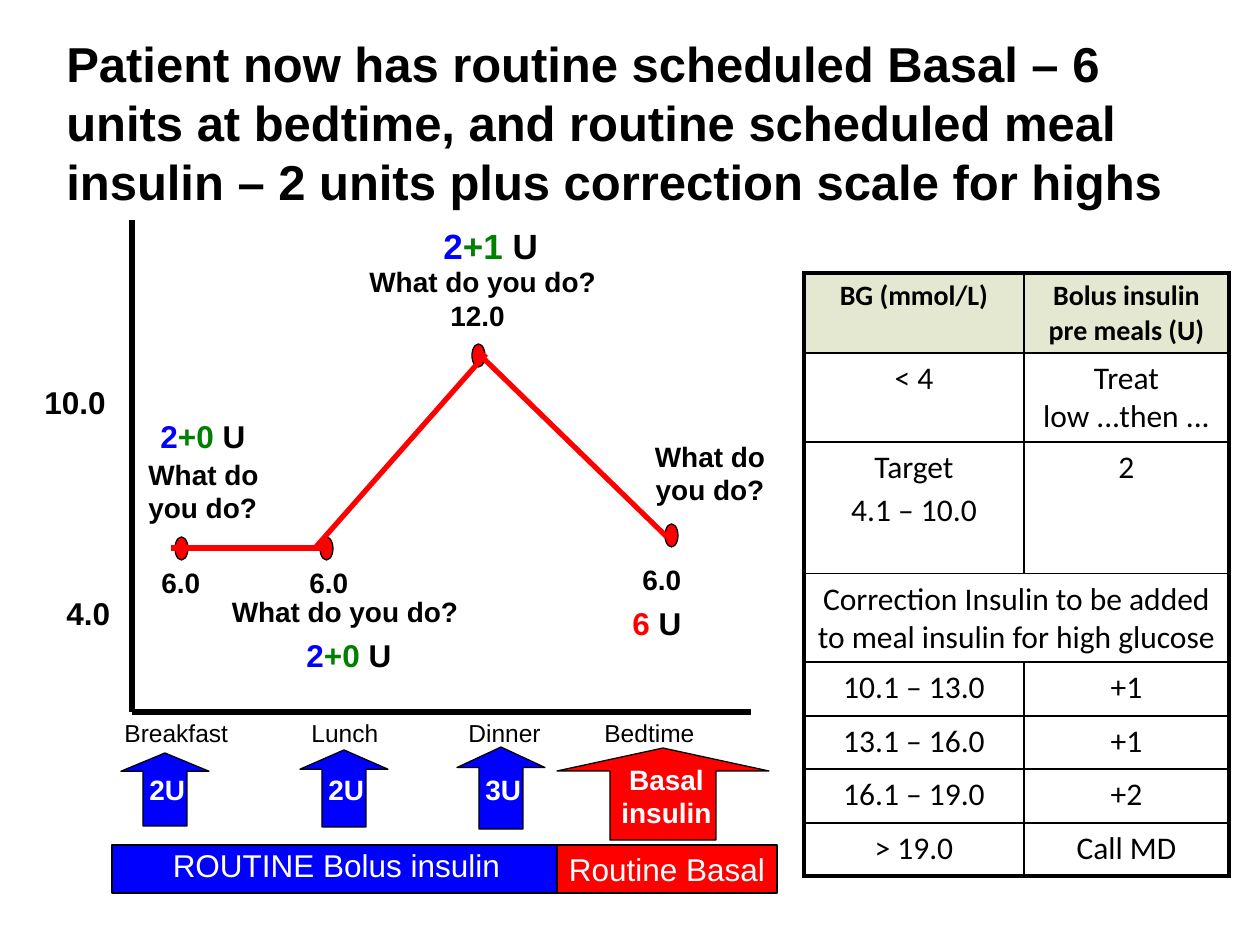
from dataclasses import dataclass

from lxml import etree
from pptx import Presentation
from pptx import util as u
from pptx.dml.color import RGBColor
from pptx.enum import shapes, text
from pptx.oxml import ns


@dataclass
class Theme:
    black: str = "000000"
    white: str = "FFFFFF"
    blue: str = "0000FF"
    green: str = "008000"
    red: str = "FF0000"
    head: str = "E5E8D0"
    sans: str = "Arial"
    grid: str = "Calibri"
    title: int = 28
    big: int = 20
    mid: int = 18
    small: int = 16
    tiny: int = 14
    thick: float = 3
    frame: float = 2.25
    rule: float = 1
    thin: float = 0.75


T = Theme()
MID = text.PP_ALIGN.CENTER
KIND = shapes.MSO_SHAPE


def px(n):
    return u.Emu(round(n * 914400 / 126))


def rgb(tone):
    return RGBColor.from_string(tone)


def style(para, size, tone=T.black, bold=True, face=T.sans, align=None):
    font = para.font
    font.name, font.size, font.bold = face, u.Pt(size), bold
    font.color.rgb = rgb(tone)
    para.alignment = align


def write(slide, box, words, size, **look):
    frame = slide.shapes.add_textbox(*map(px, box)).text_frame
    frame.word_wrap = True
    para = frame.paragraphs[0]
    style(para, size, **look)
    parts = [(words, None)] if isinstance(words, str) else words
    for part, tone in parts:
        run = para.add_run()
        run.text = part
        if tone:
            run.font.color.rgb = rgb(tone)
    return frame


def draw(slide, kind, box, tone):
    shape = slide.shapes.add_shape(kind, *map(px, box))
    shape.shadow.inherit = False
    shape.fill.solid()
    shape.fill.fore_color.rgb = rgb(tone)
    shape.line.color.rgb = rgb(T.black)
    shape.line.width = u.Pt(T.thin)
    return shape


def stroke(slide, ends, tone):
    line = slide.shapes.add_connector(shapes.MSO_CONNECTOR.STRAIGHT, *map(px, ends))
    line.line.color.rgb = rgb(tone)
    line.line.width = u.Pt(T.thick)
    etree.SubElement(line._element.spPr, ns.qn("a:effectLst"))


def title(slide, box):
    words = ("Patient now has routine scheduled Basal – 6 units at bedtime, and "
             "routine scheduled meal insulin – 2 units plus correction scale for highs")
    frame = write(slide, box, words, T.title)
    frame.vertical_anchor = text.MSO_ANCHOR.MIDDLE


def graph(slide, box):
    left, top, wide, high = box

    def put(x, y, w, h, words, size, **look):
        write(slide, (left + x, top + y, w, h), words, size, **look)

    def join(a, b, c, d, tone):
        stroke(slide, (left + a, top + b, left + c, top + d), tone)

    axis = 100
    join(axis, 2, axis, high, T.black)
    join(axis, high, wide, high, T.black)
    put(22, 370, 78, 50, "4.0", T.mid)
    put(0, 159, 101, 50, "10.0", T.mid)
    for x, meal in (80, "Breakfast"), (267, "Lunch"), (424, "Dinner"), (560, "Bedtime"):
        put(x, high, 158, 42, meal, T.tiny, bold=False)

    for x, y in (143, 319), (288, 319), (440, 126), (633, 306):
        draw(slide, KIND.OVAL, (left + x, top + y, 13, 23), T.red)
    for ends in (139, 330, 289, 330), (283, 330, 454, 136), (447, 136, 635, 319):
        join(*ends, T.red)
    for x, y, value in (117, 341, "6.0"), (265, 341, "6.0"), (406, 74, "12.0"), (598, 338, "6.0"):
        put(x, y, 87, 47, value, T.small)

    for x, y, w, h, align in ((104, 233, 147, 81, None), (185, 370, 256, 47, MID),
                              (325, 40, 273, 47, None), (608, 215, 140, 81, MID)):
        put(x, y, w, h, "What do you do?", T.small, align=align)
    for x, y, extra, size in ((116, 193, "+0 ", T.mid), (262, 412, "+0 ", T.mid),
                              (399, 0, "+1 ", T.big)):
        put(x, y, 147, 50, [("2", T.blue), (extra, T.green), ("U", T.black)], size)
    put(588, 380, 116, 50, [("6 ", T.red), ("U", T.black)], T.mid)


def doses(slide, box):
    left, top, wide, high = box
    split, bar = 445, 48
    base = top + high - bar
    for x, y, h, dose in (9, 6, 73, "2U"), (188, 3, 77, "2U"), (345, 0, 82, "3U"):
        draw(slide, KIND.UP_ARROW, (left + x, top + y, 88, h), T.blue).adjustments[1] = 0.25
        write(slide, (left + x + 16, top + 19, 83, 47), dose, T.small, tone=T.white)

    arrow = draw(slide, KIND.UP_ARROW, (left + split, top + 1, 212, 92), T.red)
    arrow.adjustments[1] = 0.25
    write(slide, (left + split + 45, top + 9, 129, 81), "Basal insulin", T.small,
          tone=T.white, align=MID)

    draw(slide, KIND.RECTANGLE, (left, base, split, bar), T.blue)
    write(slide, (left + 4, base - 5, split - 4, 50), "ROUTINE Bolus insulin", T.mid,
          tone=T.white, bold=False, align=MID)
    basal = draw(slide, KIND.RECTANGLE, (left + split, base, wide - split, bar), T.red)
    frame = basal.text_frame
    frame.word_wrap = False
    frame.text = "Routine Basal"
    style(frame.paragraphs[0], T.mid, T.white, False, align=MID)


def edge(cell, widths):
    props = cell._tc.get_or_add_tcPr()
    for spot, (side, width) in enumerate(zip("LRTB", widths)):
        line = etree.Element(ns.qn("a:ln" + side), w=str(u.Pt(width)))
        fill = etree.SubElement(line, ns.qn("a:solidFill"))
        etree.SubElement(fill, ns.qn("a:srgbClr"), val=T.black)
        props.insert(spot, line)


def scale(slide, box):
    rows = [
        (79, "BG (mmol/L)", "Bolus insulin pre meals (U)"),
        (89, "< 4", "Treat\vlow ...then ..."),
        (132, "Target\n4.1 – 10.0", "2"),
        (88, "Correction Insulin to be added to meal insulin for high glucose", ""),
        (54, "10.1 – 13.0", "+1"),
        (53, "13.1 – 16.0", "+1"),
        (54, "16.1 – 19.0", "+2"),
        (53, "> 19.0", "Call MD"),
    ]
    last = len(rows) - 1
    table = slide.shapes.add_table(len(rows), 2, *map(px, box)).table
    table.first_row = table.horz_banding = False
    for col, width in zip(table.columns, (220, box[2] - 220)):
        col.width = px(width)
    for r, (height, *words) in enumerate(rows):
        table.rows[r].height = px(height)
        wide = not words[1]
        for c, part in enumerate(words):
            cell = table.cell(r, c)
            cell.text = part
            for n, para in enumerate(cell.text_frame.paragraphs):
                style(para, T.mid if r else T.small, bold=r == 0, face=T.grid, align=MID)
                para.space_before = u.Pt(3 if n else 0)
            if r:
                cell.fill.background()
            else:
                cell.fill.solid()
                cell.fill.fore_color.rgb = rgb(T.head)
            outer = (c == 0, c == 1 or wide, r == 0, r == last)
            edge(cell, [T.frame if out else T.rule for out in outer])
        if wide:
            table.cell(r, 0).merge(table.cell(r, 1))


def main():
    deck = Presentation()
    deck.slide_width, deck.slide_height = px(1260), px(945)
    slide = deck.slides.add_slide(deck.slide_layouts[6])
    title(slide, (54, 40, 1184, 164))
    graph(slide, (32, 218, 719, 494))
    doses(slide, (112, 747, 665, 146))
    scale(slide, (804, 273, 425, 602))
    deck.save("out.pptx")


if __name__ == "__main__":
    main()
